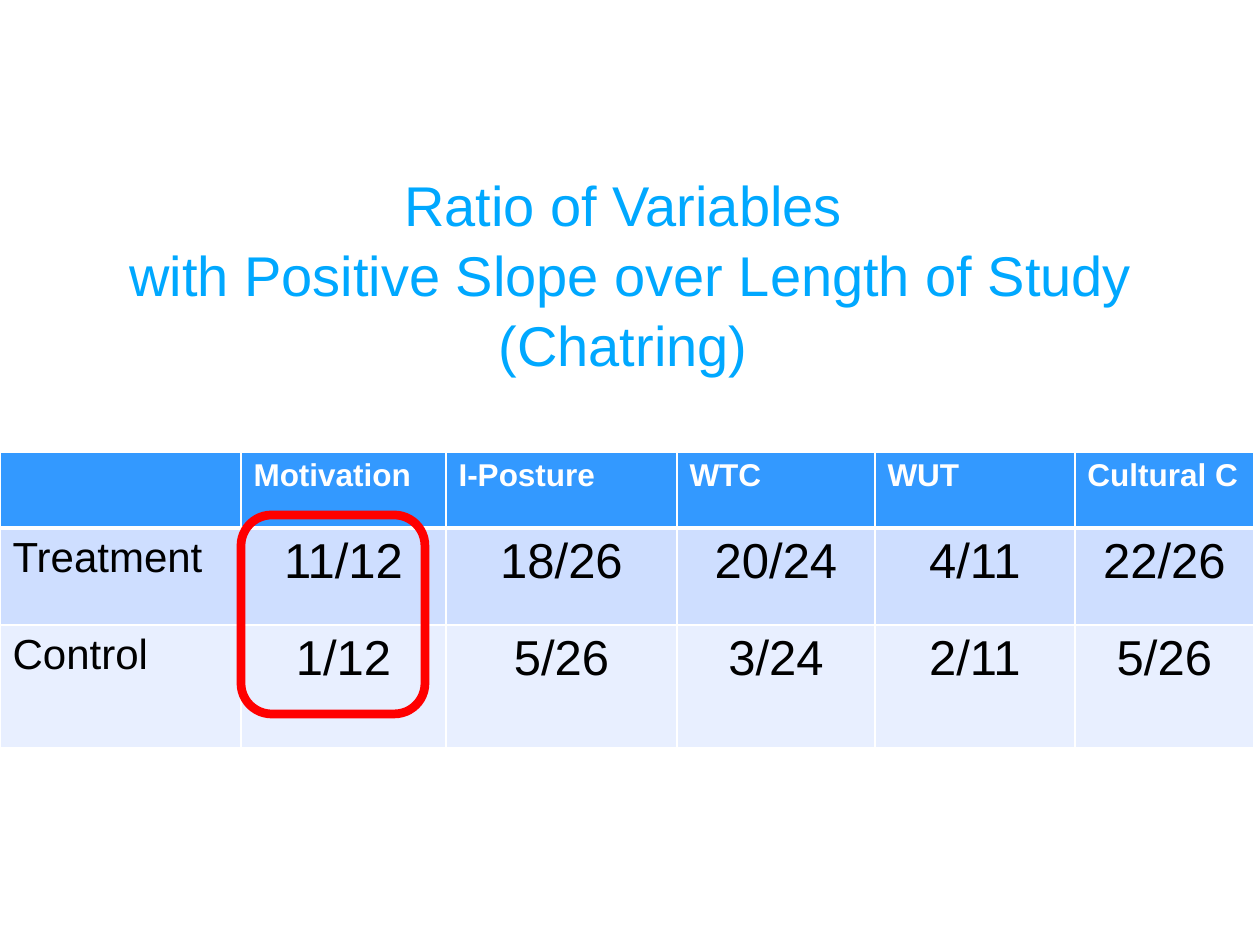
from dataclasses import dataclass

from lxml.etree import SubElement
from pptx import Presentation
from pptx.dml.color import RGBColor
from pptx.enum.shapes import MSO_SHAPE as Shape
from pptx.enum.text import PP_ALIGN as Align
from pptx.oxml.ns import qn
from pptx.util import Emu, Pt

EMU_PER_PX = 914400 / 126
FONT = "Arial"

WHITE = RGBColor(0xFF, 0xFF, 0xFF)
BLACK = RGBColor(0x00, 0x00, 0x00)
RED = RGBColor(0xFF, 0x00, 0x00)
SKY = RGBColor(0x00, 0xA8, 0xFF)
HEADER_BLUE = RGBColor(0x33, 0x99, 0xFF)
PALE_BLUE = RGBColor(0xCE, 0xDE, 0xFF)
PALEST_BLUE = RGBColor(0xE8, 0xEF, 0xFF)


@dataclass(frozen=True)
class Row:
    height: int
    fill: RGBColor
    texts: tuple[str, ...]


COLUMN_WIDTHS = (241, 205, 231, 198, 200, 179)
ROWS = (
    Row(76, HEADER_BLUE, ("", "Motivation", "I-Posture", "WTC", "WUT", "Cultural C")),
    Row(97, PALE_BLUE, ("Treatment", "11/12", "18/26", "20/24", "4/11", "22/26")),
    Row(123, PALEST_BLUE, ("Control", "1/12", "5/26", "3/24", "2/11", "5/26")),
)
TITLE_LINES = (
    "Ratio of Variables ",
    "with Positive Slope over Length of Study ",
    "(Chatring) ",
)


def px(length: int) -> Emu:
    return Emu(round(length * EMU_PER_PX))


def write(para, text: str, *, size: int, color: RGBColor,
          bold: bool = False, align: Align = Align.LEFT) -> None:
    para.alignment = align
    if not text:
        return
    span = para.add_run()
    span.text = text
    span.font.name = FONT
    span.font.size = Pt(size)
    span.font.bold = bold
    span.font.color.rgb = color


def add_borders(cell, *, top: int, bottom: int) -> None:
    """Draw white cell borders; call before the fill is set."""
    properties = cell._tc.get_or_add_tcPr()
    for side, width in (("L", 1), ("R", 1), ("T", top), ("B", bottom)):
        line = SubElement(properties, qn(f"a:ln{side}"), w=str(Pt(width)))
        fill = SubElement(line, qn("a:solidFill"))
        SubElement(fill, qn("a:srgbClr"), val=str(WHITE))


def add_ratio_table(page) -> None:
    height = sum(row.height for row in ROWS)
    table = page.shapes.add_table(
        len(ROWS), len(COLUMN_WIDTHS),
        px(0), px(452), px(sum(COLUMN_WIDTHS)), px(height)).table
    for column, width in zip(table.columns, COLUMN_WIDTHS):
        column.width = px(width)
    for r, row in enumerate(ROWS):
        table.rows[r].height = px(row.height)
        for c, text in enumerate(row.texts):
            cell = table.cell(r, c)
            add_borders(cell, top=3 if r == 1 else 1, bottom=3 if r == 0 else 1)
            cell.fill.solid()
            cell.fill.fore_color.rgb = row.fill
            para = cell.text_frame.paragraphs[0]
            if r == 0:
                write(para, text, size=18, color=WHITE, bold=True)
            elif c == 0:
                write(para, text, size=24, color=BLACK)
            else:
                write(para, text, size=28, color=BLACK, align=Align.CENTER)


def add_title(page) -> None:
    box = page.shapes.add_textbox(px(111), px(162), px(1040), px(217))
    frame = box.text_frame
    frame.word_wrap = False
    for index, text in enumerate(TITLE_LINES):
        para = frame.add_paragraph() if index else frame.paragraphs[0]
        para.line_spacing = 1.04
        write(para, text, size=32, color=SKY, align=Align.CENTER)


def add_highlight(page) -> None:
    ring = page.shapes.add_shape(
        Shape.ROUNDED_RECTANGLE, px(241), px(515), px(184), px(199))
    ring.shadow.inherit = False
    ring.fill.background()
    ring.line.color.rgb = RED
    ring.line.width = Pt(5)


def main() -> None:
    deck = Presentation()
    deck.slide_width, deck.slide_height = px(1260), px(945)
    page = deck.slides.add_slide(deck.slide_layouts[6])
    add_ratio_table(page)
    add_title(page)
    add_highlight(page)
    deck.save("out.pptx")


if __name__ == "__main__":
    main()
